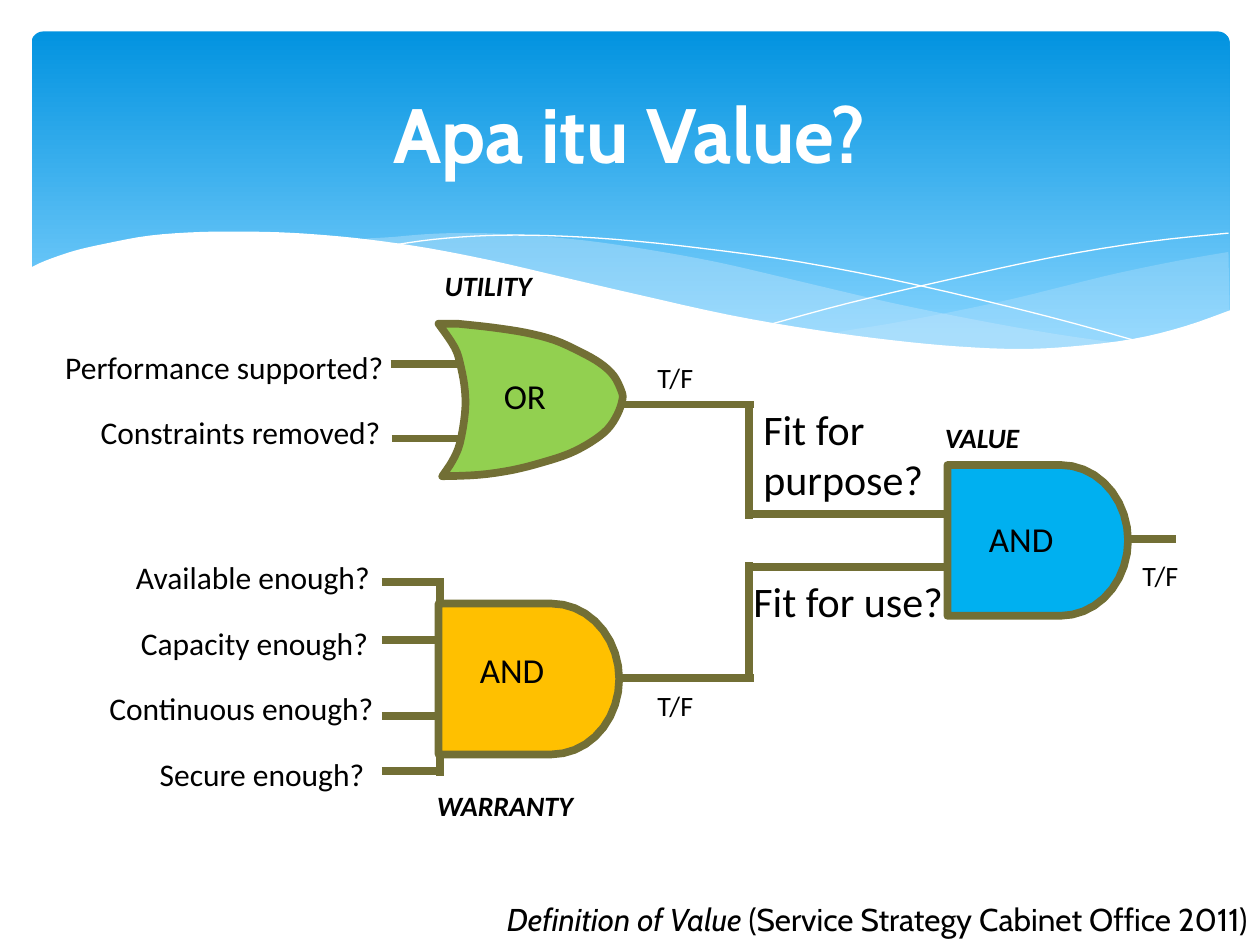
import math
from dataclasses import dataclass

from lxml import etree
from pptx import Presentation
from pptx.dml.color import RGBColor
from pptx.enum import shapes, text
from pptx.oxml.ns import qn
from pptx.util import Pt


@dataclass(frozen=True)
class Theme:
    white: str = "FFFFFF"
    black: str = "000000"
    sky: str = "0293E0"
    pale_sky: str = "83D3FE"
    wave: str = "C6E7FC"
    wire: str = "726F35"
    utility: str = "92D050"
    warranty: str = "FFC000"
    value: str = "00B0F0"
    heading: str = "Cabin"
    body: str = "Calibri"
    title_size: float = 44
    outcome_size: float = 24
    gate_size: float = 20
    input_size: float = 18
    caption_size: float = 16
    wire_width: float = 4.38


def spline(points, steps=4):
    padded = [points[0], *points, points[-1]]
    curve = [points[0]]
    for a, b, c, d in zip(padded, padded[1:], padded[2:], padded[3:]):
        for i in range(1, steps + 1):
            t = i / steps
            curve.append(tuple(
                (2 * q + (r - p) * t + (2 * p - 5 * q + 4 * r - w) * t ** 2
                 + (3 * q - p - 3 * r + w) * t ** 3) / 2
                for p, q, r, w in zip(a, b, c, d)))
    return curve


class Deck:
    def __init__(self, theme):
        self.theme = theme
        self.prs = Presentation()
        self.prs.slide_width, self.prs.slide_height = Pt(720), Pt(540)
        self.s = self.prs.slides.add_slide(self.prs.slide_layouts[5])

    def apply(self, target, values):
        for name, value in values.items():
            setattr(target, name, value)

    def style(self, r, size, font, color, **extra):
        self.apply(r.font, {"size": Pt(size), "name": font, **extra})
        r.font.color.rgb = RGBColor.from_string(color)

    def title(self, wording, x, y, w, h):
        sp = self.s.shapes.title
        sp.element.getparent().append(sp.element)
        self.apply(sp, {"left": Pt(x), "top": Pt(y), "width": Pt(w), "height": Pt(h)})
        tf = sp.text_frame
        self.apply(tf, {"word_wrap": True, "vertical_anchor": text.MSO_ANCHOR.MIDDLE})
        p = tf.paragraphs[0]
        p.alignment = text.PP_ALIGN.CENTER
        r = p.add_run()
        r.text = wording
        self.style(r, self.theme.title_size, self.theme.heading, self.theme.white, bold=True)

    def label(self, runs, x, y, w, h, size, font=None, align=text.PP_ALIGN.LEFT, **extra):
        tf = self.s.shapes.add_textbox(Pt(x), Pt(y), Pt(w), Pt(h)).text_frame
        self.apply(tf, {"word_wrap": True, "auto_size": text.MSO_AUTO_SIZE.SHAPE_TO_FIT_TEXT})
        p = tf.paragraphs[0]
        p.alignment = align
        for wording, italic in runs:
            r = p.add_run()
            r.text = wording
            self.style(r, size, font or self.theme.body, self.theme.black,
                       italic=italic, **extra)

    def banner(self, x, y, w, h):
        sp = self.s.shapes.add_shape(shapes.MSO_SHAPE.ROUNDED_RECTANGLE,
                                     Pt(x), Pt(y), Pt(w), Pt(h))
        sp.adjustments[0] = 0.034
        sp.shadow.inherit = False
        sp.line.fill.background()
        sp.fill.gradient()
        sp.fill.gradient_angle = 270
        stops = ((0, self.theme.sky), (0.9, self.theme.pale_sky))
        for stop, (position, color) in zip(sp.fill.gradient_stops, stops):
            stop.position = position
            stop.color.rgb = RGBColor.from_string(color)

    def outline(self, points, fill=None, opacity=100, line=None, width=0):
        start, *rest = [(Pt(x), Pt(y)) for x, y in points]
        builder = self.s.shapes.build_freeform(*start, scale=1.0)
        builder.add_line_segments(rest, close=fill is not None)
        sp = builder.convert_to_shape()
        sp.shadow.inherit = False
        if fill:
            sp.fill.solid()
            sp.fill.fore_color.rgb = RGBColor.from_string(fill)
            if opacity < 100:
                color = sp.element.spPr.find(qn("a:solidFill"))[0]
                etree.SubElement(color, qn("a:alpha"), val=str(opacity * 1000))
        else:
            sp.fill.background()
        if line:
            sp.line.color.rgb = RGBColor.from_string(line)
            sp.line.width = Pt(width)
        else:
            sp.line.fill.background()

    def wire(self, x1, y1, x2, y2):
        cx = self.s.shapes.add_connector(shapes.MSO_CONNECTOR.STRAIGHT,
                                         Pt(x1), Pt(y1), Pt(x2), Pt(y2))
        cx.line.color.rgb = RGBColor.from_string(self.theme.wire)
        cx.line.width = Pt(self.theme.wire_width)
        etree.SubElement(cx.element.spPr, qn("a:effectLst"))

    def gate(self, points, fill):
        self.outline(points, fill, line=self.theme.wire, width=self.theme.wire_width)

    def and_gate(self, x, y, fill, flat=64.6, rx=38.6, ry=43.1):
        angles = [math.radians(a) for a in range(-90, 91, 10)]
        bow = [(x + flat + rx * math.cos(a), y + ry + ry * math.sin(a)) for a in angles]
        self.gate([(x, y), *bow, (x, y + 2 * ry)], fill)


RIGHT_WAVE = [
    (702, 144), (673.2, 149), (641.5, 155.5), (620, 160.6), (579.6, 170.6),
    (542.2, 178.6), (508.3, 185), (475.9, 190.8), (497.5, 193.7), (527, 197.3),
    (562.3, 199.4), (593.3, 199.6), (621.4, 198), (651.6, 193.7), (678.2, 186.5),
    (702.6, 177.8)]
LONG_WAVE = [
    (643, 196.6), (602.6, 190.8), (558, 182.9), (508.3, 172.8), (452.9, 159.8),
    (409.7, 149.8), (370, 142.6), (334.8, 137.5), (302.4, 134.6), (273.6, 133.2),
    (247.7, 133.6), (225.4, 135.4), (205.9, 137.5), (246.2, 143.3), (290.9, 151.9),
    (323.3, 159.8), (381.6, 172.8), (432.7, 183.6), (478.8, 191.5), (519.8, 197.3),
    (556.6, 199.4), (589, 200.2), (617, 199.4), (643, 196.6)]
FALLING_LINE = [
    (222.5, 140.4), (247.7, 136.8), (278.6, 134.6), (311.8, 134.6), (352, 136.8),
    (400.3, 141.8), (457.9, 149.8), (523.4, 162.7), (598.3, 180.7), (653, 195.8)]
RISING_LINE = [
    (441.4, 185), (483.8, 173.5), (538.6, 160.6), (601.9, 146.9), (655.2, 138.2),
    (702, 133.2)]
PAGE_EDGE = [
    (703.4, 177.1), (676.8, 186.5), (647.3, 193.7), (612, 198), (582.5, 199.4),
    (547.9, 198), (509.8, 194.4), (466.6, 188.6), (416.9, 180), (362.2, 167.8),
    (321.8, 158.4), (281.5, 149), (244.8, 141.8), (210.2, 136.8), (180, 133.9),
    (151.9, 132.5), (115.9, 132.5), (85.7, 134.6), (61.2, 139), (42.5, 143.3),
    (25.9, 149), (16.6, 153.4)]
OR_BACK = [(252.7, 272.2), (258.5, 263.5), (262.8, 253.4), (265.7, 236.2),
           (265.7, 223.2), (263.5, 210.2), (259.9, 198.7), (250.6, 185)]
OR_NOSE = [(261.4, 185), (281.5, 187.2), (300.2, 190.1), (316.8, 194.4),
           (331.2, 200.9), (342.7, 207.4), (350.6, 214.6), (355, 223.2),
           (355.7, 228.2), (352.8, 236.9), (347, 245.5), (337.7, 252.7),
           (325.4, 259.2), (310.3, 264.2), (293, 268.6), (273.6, 271.4), (252.7, 272.2)]


def main():
    theme = Theme()
    deck = Deck(theme)

    deck.banner(18, 18, 684.7, 194.4)
    deck.outline(spline(RIGHT_WAVE), theme.wave, 29)
    deck.outline(spline(LONG_WAVE), theme.wave, 40)
    for line in (FALLING_LINE, RISING_LINE):
        deck.outline(spline(line), line=theme.white)
    deck.outline(spline(PAGE_EDGE) + [(16.6, 236.9), (703.4, 236.9)], theme.white)
    deck.title("Apa itu Value?", 36, 26.6, 648, 98.6)

    for wording, x, y, h in (("Fit for purpose?", 429.1, 226.8, 65.5),
                             ("Fit for use?", 423.4, 325.4, 36)):
        deck.label([(wording, False)], x, y, 149.8, h, theme.outcome_size)

    for x, y in ((223.2, 208.1), (223.9, 250.6)):
        deck.wire(x, y, x + 50.4, y)
    for y in (332.6, 365.8, 409, 440.6):
        deck.wire(218.2, y, 251.3, y)
    for start, turn, end in ((231.1, 296.6, 293.8), (387.4, 321.1, 324)):
        deck.wire(347, start, 430.6, start)
        deck.wire(428, start, 428, turn)
        deck.wire(427, end, 545, end)
    deck.wire(630.7, 308.2, 671.8, 308.2)
    deck.wire(251.3, 330.5, 251.3, 443.5)

    deck.and_gate(250.6, 344.9, theme.warranty)
    deck.and_gate(541.4, 265.7, theme.value)
    deck.gate(spline(OR_BACK) + spline(OR_NOSE), theme.utility)

    for wording, x, y, w in (("UTILITY", 247, 149.8, 95), ("WARRANTY", 242.6, 447.1, 115.2),
                             ("VALUE", 532.8, 236.9, 95)):
        deck.label([(wording, True)], x, y, w, 26.6, theme.caption_size, bold=True)
    for x, y in ((368.6, 390.2), (368.6, 202.3), (645.8, 315.4)):
        deck.label([("T/F", False)], x, y, 47.5, 26.6, theme.caption_size)
    for wording, x, y in (("OR", 280.8, 210.2), ("AND", 267.1, 367.2), ("AND", 558, 292.3)):
        deck.label([(wording, False)], x, y, 61.2, 31.7, theme.gate_size)

    for wording, x, y, w in (("Performance supported?", 30.2, 195.1, 221.8),
                             ("Constraints removed?", 50.4, 232.6, 196.6)):
        deck.label([(wording, False)], x, y, w, 28.8, theme.input_size)
    checks = (("Available", 70.6), ("Capacity", 73.4), ("Continuous", 55.4), ("Secure", 84.2))
    for i, (quality, x) in enumerate(checks):
        deck.label([(f"{quality} enough?", False)], x, 315.4 + 37.44 * i, 175.7, 28.8,
                   theme.input_size)

    deck.label([("Definition of Value ", True), ("(Service Strategy Cabinet Office 2011)", False)],
               0, 510.5, 720, 28.8, theme.input_size, theme.heading, text.PP_ALIGN.RIGHT)
    deck.prs.save("out.pptx")


if __name__ == "__main__":
    main()
